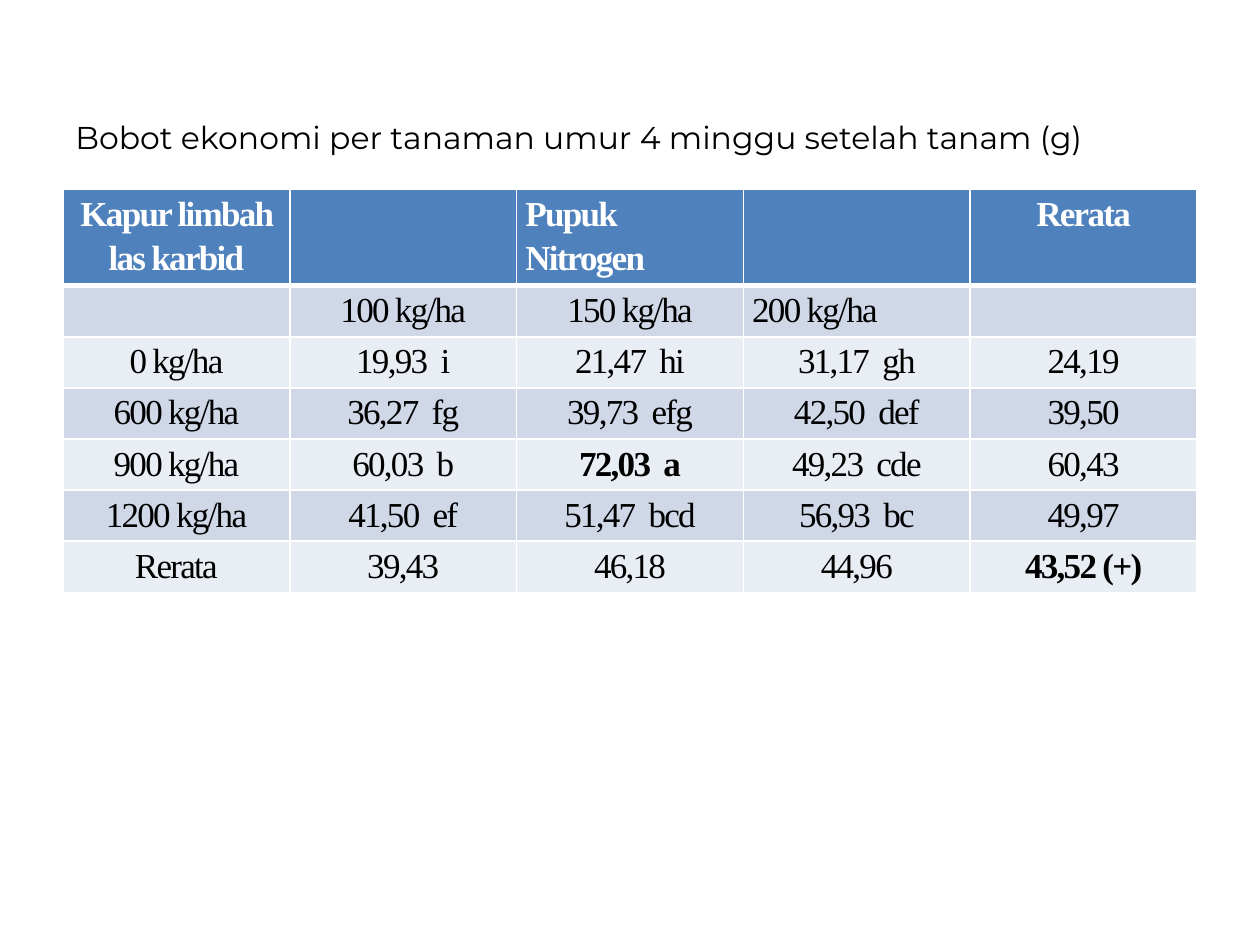
from lxml import etree
from pptx import Presentation
from pptx.dml.color import RGBColor
from pptx.enum import text
from pptx.oxml import ns
from pptx.util import Inches, Pt

TITLE = "Bobot ekonomi per tanaman umur 4 minggu setelah tanam (g)"
ROWS = [
    ("Kapur limbah las karbid", "", "Pupuk Nitrogen", "", "Rerata"),
    ("", "100 kg/ha", "150 kg/ha", "200 kg/ha", ""),
    ("0 kg/ha", "19,93  i", "21,47  hi", "31,17  gh", "24,19"),
    ("600 kg/ha", "36,27  fg", "39,73  efg", "42,50  def", "39,50"),
    ("900 kg/ha", "60,03  b", "72,03  a", "49,23  cde", "60,43"),
    ("1200 kg/ha", "41,50  ef", "51,47  bcd", "56,93  bc", "49,97"),
    ("Rerata", "39,43", "46,18", "44,96", "43,52 (+)"),
]
BOLD = {"72,03  a", "43,52 (+)"}
JUSTIFIED = {"Pupuk Nitrogen", "200 kg/ha"}

WHITE = RGBColor(0xFF, 0xFF, 0xFF)
BLACK = RGBColor(0, 0, 0)
HEADER = RGBColor(0x4F, 0x81, 0xBD)
BANDS = [RGBColor(0xE9, 0xED, 0xF4), RGBColor(0xD0, 0xD8, 0xE8)]


def add_run(p, words, font, size, color, bold=False):
    r = p.add_run()
    r.text = words
    r.font.name, r.font.size, r.font.bold = font, Pt(size), bold
    r.font.color.rgb = color
    return r


def set_borders(cell, **widths):
    """Draw white cell borders; widths are points by side (L, R, T, B)."""
    tcPr = cell._tc.get_or_add_tcPr()
    for side, width in widths.items():
        ln = etree.SubElement(tcPr, ns.qn(f"a:ln{side}"), w=str(Pt(width)))
        fill = etree.SubElement(ln, ns.qn("a:solidFill"))
        etree.SubElement(fill, ns.qn("a:srgbClr"), val=str(WHITE))


def add_title(s):
    tf = s.shapes.add_textbox(Inches(0.5), Inches(0.3), Inches(9), Inches(1.25)).text_frame
    tf.word_wrap = True
    tf.vertical_anchor = text.MSO_ANCHOR.MIDDLE
    tf.margin_top = Inches(0.37)
    add_run(tf.paragraphs[0], TITLE, "Montserrat", 18, BLACK)


def fill_cell(cell, words, row):
    is_header = row == 0
    set_borders(cell, L=1, R=1, T=3 if row == 1 else 1, B=3 if is_header else 1)
    cell.fill.solid()
    cell.fill.fore_color.rgb = HEADER if is_header else BANDS[row % 2]
    cell.margin_left = cell.margin_right = Inches(0.07)
    cell.margin_top = cell.margin_bottom = 0
    if not words:
        return
    p = cell.text_frame.paragraphs[0]
    p.line_spacing = 1.15
    p.alignment = text.PP_ALIGN.JUSTIFY if words in JUSTIFIED else text.PP_ALIGN.CENTER
    r = add_run(p, words, "Times New Roman", 20, WHITE if is_header else BLACK,
                is_header or words in BOLD)
    r._r.get_or_add_rPr().set("spc", "-100")


def add_yield_table(s):
    table = s.shapes.add_table(len(ROWS), len(ROWS[0]), Inches(0.5), Inches(1.5),
                               Inches(9), Inches(2.84)).table
    for row, values in enumerate(ROWS):
        for col, words in enumerate(values):
            fill_cell(table.cell(row, col), words, row)


def main():
    prs = Presentation()
    prs.slide_width, prs.slide_height = Inches(10), Inches(7.5)
    s = prs.slides.add_slide(prs.slide_layouts[6])
    add_title(s)
    add_yield_table(s)
    prs.save("out.pptx")


if __name__ == "__main__":
    main()
